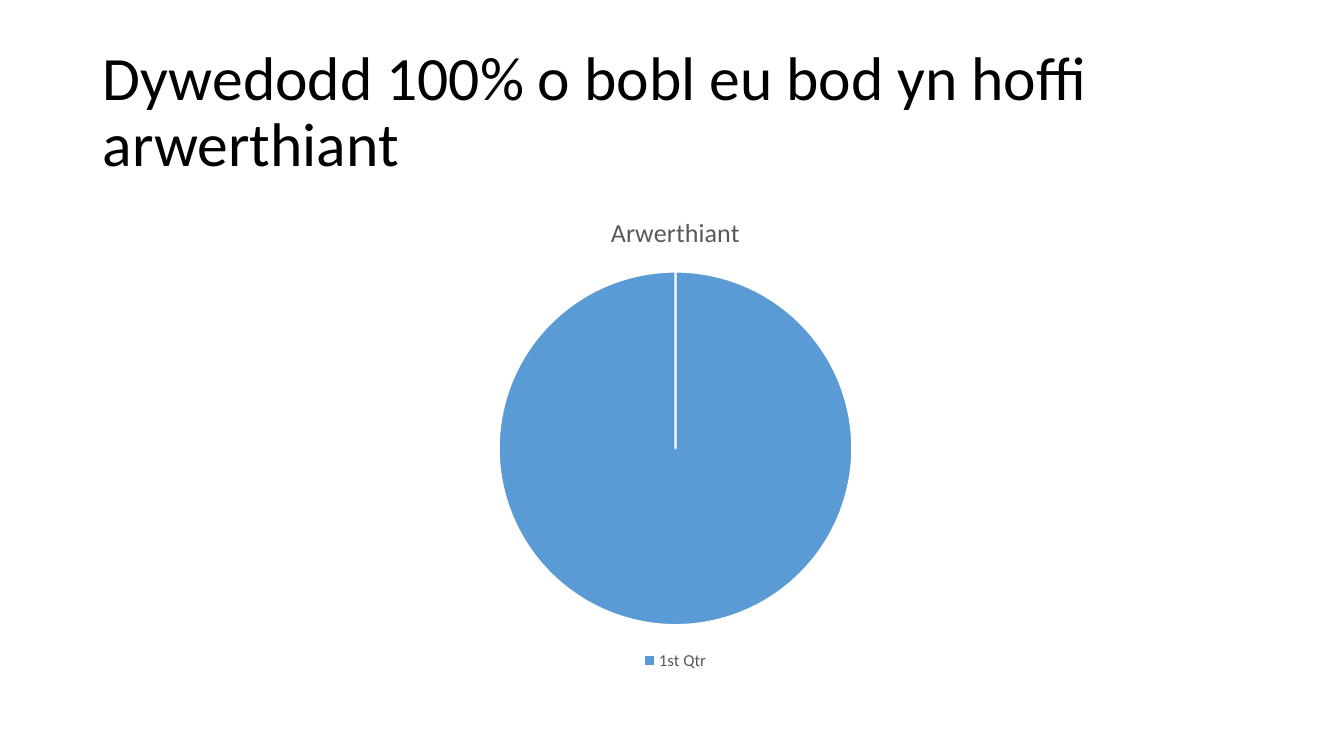
from pptx import Presentation
from pptx.chart.data import CategoryChartData
from pptx.dml.color import RGBColor
from pptx.enum.chart import XL_CHART_TYPE, XL_LEGEND_POSITION
from pptx.enum.text import MSO_ANCHOR, PP_ALIGN
from pptx.util import Inches, Pt

PIE = XL_CHART_TYPE.PIE
BOTTOM = XL_LEGEND_POSITION.BOTTOM
MIDDLE = MSO_ANCHOR.MIDDLE
LEFT = PP_ALIGN.LEFT


def color(code):
    return RGBColor.from_string(code)


def place(box):
    return [Inches(n) for n in box]


class Deck:
    face = "Calibri"
    ink = "000000"
    gray = "595959"
    blue = "5B9BD5"
    white = "FFFFFF"

    def __init__(self):
        self.prs = Presentation()
        self.prs.slide_width = Inches(13.33)
        self.prs.slide_height = Inches(7.5)
        self.slide = self.prs.slides.add_slide(self.prs.slide_layouts[5])

    def style(self, font, size, code):
        font.name = self.face
        font.size = Pt(size)
        font.bold = False
        font.color.rgb = color(code)

    def title(self, text, box):
        shape = self.slide.shapes.title
        shape.left, shape.top, shape.width, shape.height = place(box)
        frame = shape.text_frame
        frame.text = text
        frame.word_wrap = True
        frame.vertical_anchor = MIDDLE
        para = frame.paragraphs[0]
        para.alignment = LEFT
        para.line_spacing = 0.9
        self.style(para.runs[0].font, 44, self.ink)

    def pie(self, title, cats, vals, box):
        data = CategoryChartData()
        data.categories = cats
        data.add_series("Series 1", vals)
        chart = self.slide.shapes.add_chart(PIE, *place(box), data).chart
        self.style(chart.font, 10, self.ink)

        chart.has_title = True
        frame = chart.chart_title.text_frame
        frame.text = title
        self.style(frame.paragraphs[0].runs[0].font, 18.6, self.gray)
        chart.chart_title.include_in_layout = False

        chart.has_legend = True
        chart.legend.position = BOTTOM
        chart.legend.include_in_layout = False
        self.style(chart.legend.font, 12, self.gray)

        plot = chart.plots[0]
        plot.vary_by_categories = True
        slice_ = plot.series[0].points[0].format
        slice_.fill.solid()
        slice_.fill.fore_color.rgb = color(self.blue)
        slice_.line.color.rgb = color(self.white)
        slice_.line.width = Pt(1.5)


def main():
    deck = Deck()
    deck.title("Dywedodd 100% o bobl eu bod yn hoffi arwerthiant",
               (0.92, 0.4, 11.5, 1.45))
    deck.pie("Arwerthiant", ["1st Qtr"], [100], (0.95, 1.93, 11.5, 4.76))
    deck.prs.save("out.pptx")


if __name__ == "__main__":
    main()
